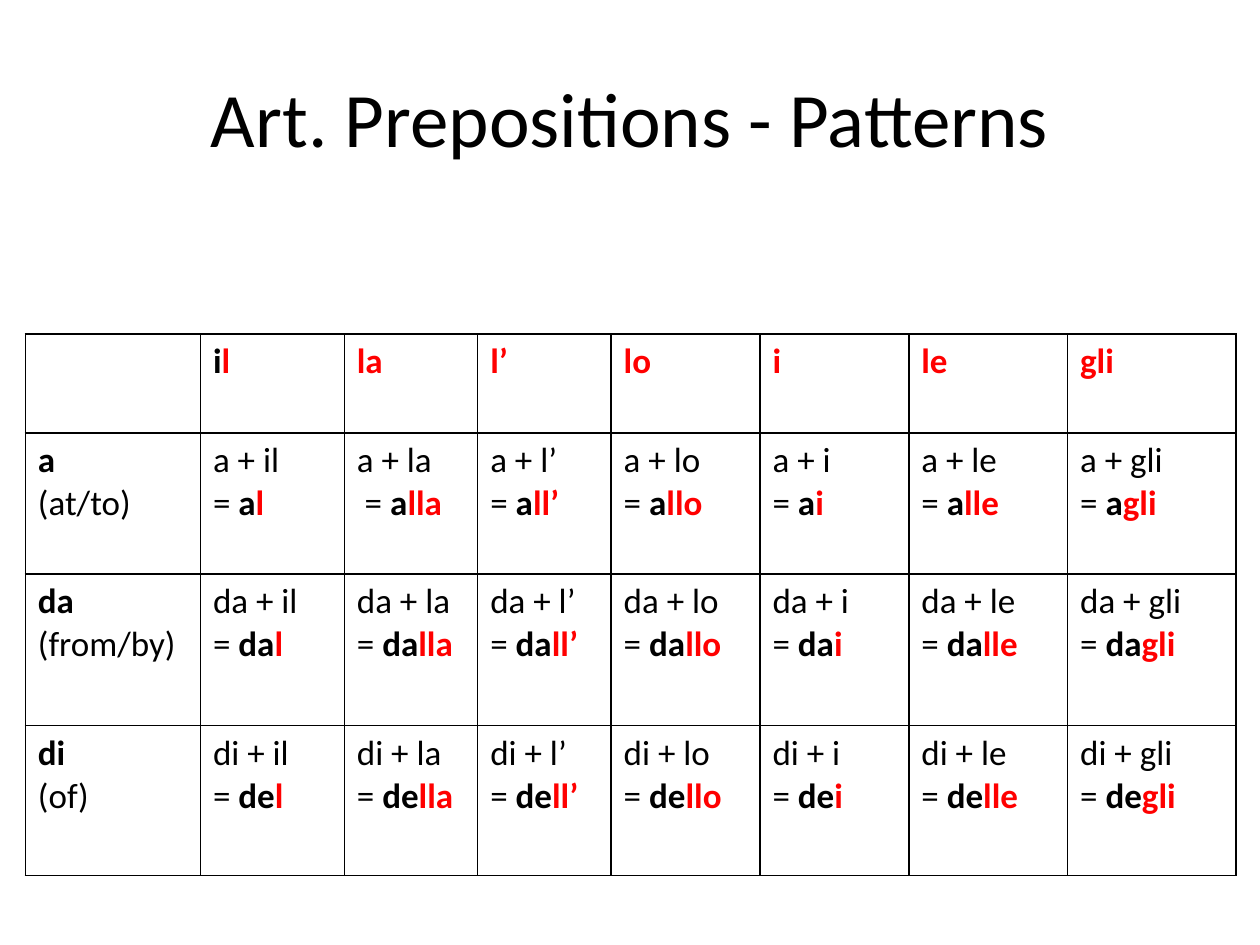
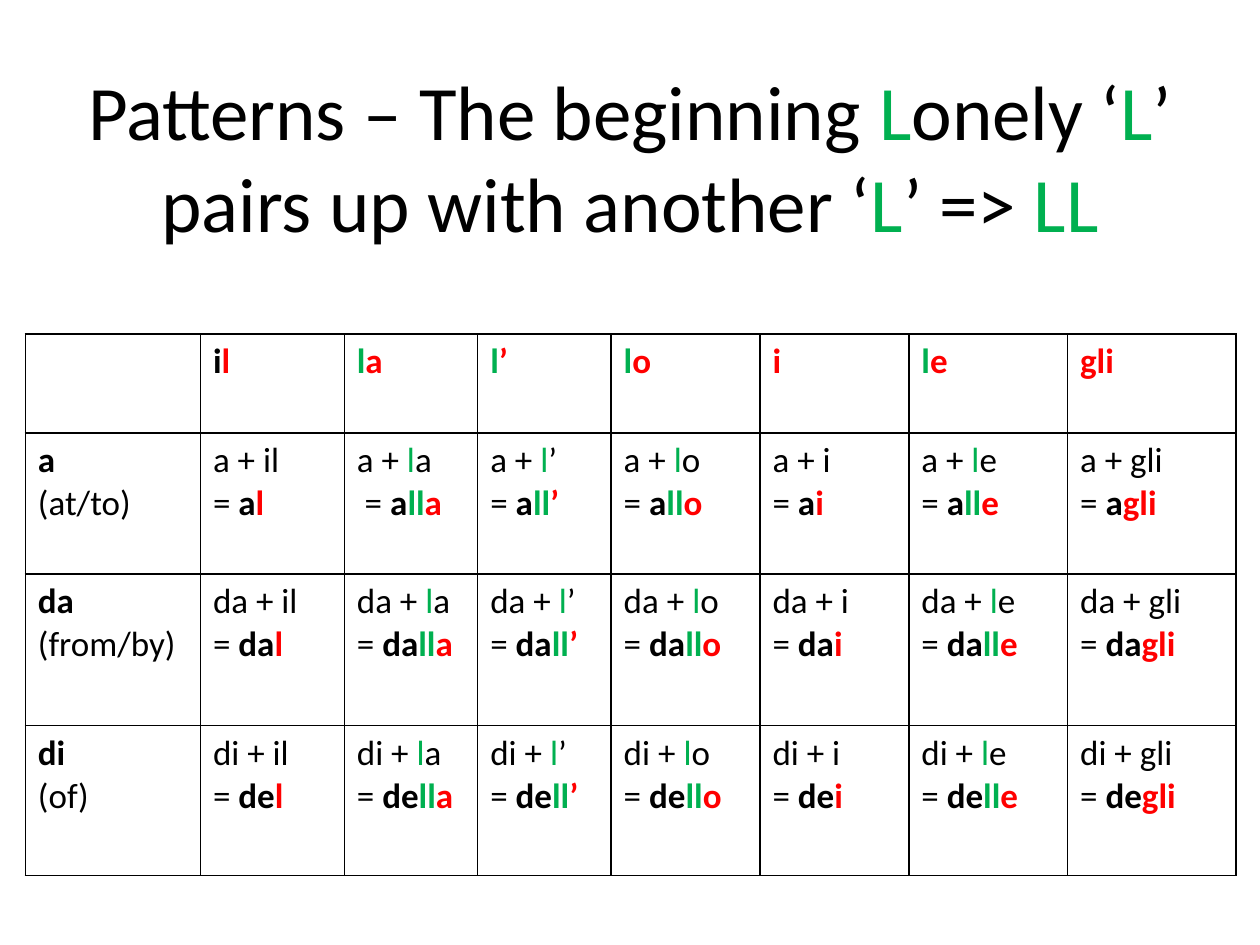
from lxml.etree import SubElement
from pptx import Presentation
from pptx.dml.color import RGBColor
from pptx.enum.text import MSO_ANCHOR, PP_ALIGN
from pptx.oxml.ns import qn
from pptx.util import Cm, Pt

COLOURS = {"ink": "000000", "ending": "FF0000", "double": "00B050"}
FONT = "Calibri"
BORDER_PT = 1
BLANK_LAYOUT = 6

TABLE_BOX = (0.51, 6.73, 24.41, 10.92)
COLUMN_SHARES = (3.53, 2.9, 2.69, 2.69, 3, 3, 3.2, 3.4)
ROW_SHARES = (2, 2.84, 3.06, 3.02)

ARTICLES = ("il", "la", "l’", "lo", "i", "le", "gli")
PREPOSITIONS = (("a", "(at/to)", "a"), ("da", "(from/by)", "da"), ("di", "(of)", "de"))

PLAIN_TITLE = [("Art. Prepositions - Patterns", "ink")]
DOUBLE_L_TITLE = [
    ("Patterns – The beginning ", "ink"), ("L", "double"), ("onely ‘", "ink"),
    ("L", "double"), ("’ pairs up with another ‘", "ink"), ("L", "double"),
    ("’ => ", "ink"), ("LL", "double"),
]


def write_text(frame, paragraphs, size=20, align=PP_ALIGN.LEFT, anchor=MSO_ANCHOR.TOP):
    """Fill a text frame with paragraphs of (text, colour[, bold]) runs."""
    frame.word_wrap = True
    frame.vertical_anchor = anchor
    for index, runs in enumerate(paragraphs):
        paragraph = frame.add_paragraph() if index else frame.paragraphs[0]
        paragraph.alignment = align
        for words, colour, *bold in runs:
            run = paragraph.add_run()
            run.text = words
            run.font.name = FONT
            run.font.size = Pt(size)
            run.font.bold = any(bold)
            run.font.color.rgb = RGBColor.from_string(COLOURS[colour])


def add_title(slide, box, runs):
    """Place a centred slide title in the box."""
    title = slide.shapes.add_textbox(*map(Cm, box))
    write_text(title.text_frame, [runs], size=44, align=PP_ALIGN.CENTER,
               anchor=MSO_ANCHOR.MIDDLE)


def outline_cell(cell):
    """Give a cell thin dark borders and no fill."""
    properties = cell._tc.get_or_add_tcPr()
    for side in ("a:lnL", "a:lnR", "a:lnT", "a:lnB"):
        line = SubElement(properties, qn(side), w=str(Pt(BORDER_PT)))
        fill = SubElement(line, qn("a:solidFill"))
        SubElement(fill, qn("a:srgbClr"), val=COLOURS["ink"])
    cell.fill.background()


def split_article(article, rest_colour, mark_l, bold):
    """Split an article into runs, with its first l marked on request."""
    if mark_l and article.startswith("l"):
        return [("l", "double", bold), (article[1:], rest_colour, bold)]
    return [(article, rest_colour, bold)]


def header_cell(article, mark_l):
    """Return the paragraphs of an article heading."""
    if article == "il":
        return [[("i", "ink", True), ("l", "ending", True)]]
    return [split_article(article, "ending", mark_l, True)]


def contraction_cell(preposition, stem, article, mark_l):
    """Return the sum and the contracted form of preposition and article."""
    equals = " = " if (preposition, article) == ("a", "la") else "= "
    if article == "il":
        ending = [("l", "ending", True)]
    elif article.startswith("l"):
        ending = [("ll", "double" if mark_l else "ending", True),
                  (article[1:], "ending", True)]
    else:
        ending = [(article, "ending", True)]
    addition = [(f"{preposition} + ", "ink")] + split_article(article, "ink", mark_l, False)
    return [addition, [(equals, "ink"), (stem, "ink", True)] + ending]


def pattern_rows(mark_l):
    """Build the rows of cell paragraphs from articles and prepositions."""
    rows = [[[]] + [header_cell(article, mark_l) for article in ARTICLES]]
    for preposition, meaning, stem in PREPOSITIONS:
        label = [[(preposition, "ink", True)], [(meaning, "ink")]]
        rows.append([label] + [contraction_cell(preposition, stem, article, mark_l)
                               for article in ARTICLES])
    return rows


def add_pattern_table(slide, box, mark_l):
    """Draw the table of contractions inside the box."""
    width, height = box[2:]
    table = slide.shapes.add_table(len(ROW_SHARES), len(COLUMN_SHARES), *map(Cm, box)).table
    table.first_row = table.horz_banding = False
    for column, share in zip(table.columns, COLUMN_SHARES):
        column.width = Cm(width * share / sum(COLUMN_SHARES))
    for row, share in zip(table.rows, ROW_SHARES):
        row.height = Cm(height * share / sum(ROW_SHARES))
    for row, contents in zip(table.rows, pattern_rows(mark_l)):
        for cell, paragraphs in zip(row.cells, contents):
            outline_cell(cell)
            write_text(cell.text_frame, paragraphs)


def add_pattern_slide(deck, title_runs, title_height, mark_l):
    """Add one slide with a title above the table of contractions."""
    slide = deck.slides.add_slide(deck.slide_layouts[BLANK_LAYOUT])
    add_title(slide, (1.27, 0.76, 22.86, title_height), title_runs)
    add_pattern_table(slide, TABLE_BOX, mark_l)


def main():
    """Build and save the two slides."""
    deck = Presentation()
    deck.slide_width, deck.slide_height = Cm(25.4), Cm(19.05)
    add_pattern_slide(deck, PLAIN_TITLE, 3.18, mark_l=False)
    add_pattern_slide(deck, DOUBLE_L_TITLE, 4.75, mark_l=True)
    deck.save("out.pptx")


if __name__ == "__main__":
    main()
